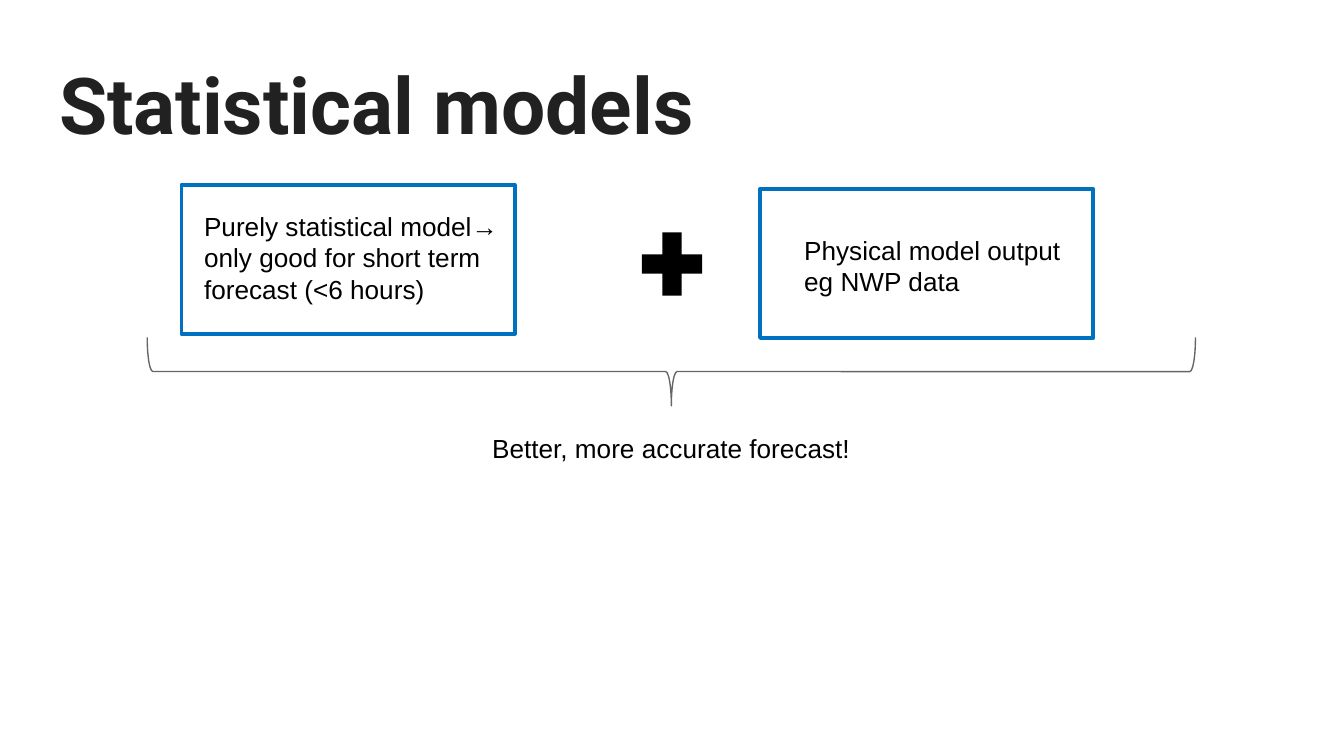
from pptx import Presentation
from pptx.dml.color import RGBColor
from pptx.enum.shapes import MSO_SHAPE
from pptx.enum.text import MSO_ANCHOR, MSO_AUTO_SIZE, PP_ALIGN
from pptx.util import Pt

EMU_PER_PX = 4572  # 200 px to the inch
TITLE_COLOR = RGBColor(0x21, 0x21, 0x21)
BLACK = RGBColor(0x00, 0x00, 0x00)
BLUE = RGBColor(0x00, 0x70, 0xC0)
GRAY = RGBColor(0x66, 0x66, 0x66)

TITLE_ONLY_LAYOUT = 5
INSET = 20
FRAME_SIZE = (496, 222)


def px(length):
    return length * EMU_PER_PX


def emu_box(box):
    return [px(length) for length in box]


def write_text(shape, text, *, size=14, font="Arial", color=BLACK, bold=False,
               align=PP_ALIGN.LEFT):
    frame = shape.text_frame
    frame.word_wrap = True
    frame.auto_size = MSO_AUTO_SIZE.NONE
    frame.vertical_anchor = MSO_ANCHOR.TOP
    frame.margin_left = frame.margin_right = px(INSET)
    frame.margin_top = frame.margin_bottom = px(INSET)
    paragraph = frame.paragraphs[0]
    paragraph.alignment = align
    run = paragraph.add_run()
    run.text = text
    run.font.name = font
    run.font.size = Pt(size)
    run.font.bold = bold
    run.font.color.rgb = color


def add_text(slide, box, text, **text_format):
    write_text(slide.shapes.add_textbox(*emu_box(box)), text, **text_format)


def add_preset(slide, preset, box, *, fill=None, line=None, line_width=1):
    shape = slide.shapes.add_shape(preset, *emu_box(box))
    shape.shadow.inherit = False
    if fill is None:
        shape.fill.background()
    else:
        shape.fill.solid()
        shape.fill.fore_color.rgb = fill
    if line is None:
        shape.line.fill.background()
    else:
        shape.line.color.rgb = line
        shape.line.width = Pt(line_width)
    return shape


def add_title(slide, box, text):
    title = slide.shapes.title
    title.left, title.top, title.width, title.height = emu_box(box)
    write_text(title, text, size=42, font="Roboto", color=TITLE_COLOR, bold=True)


def add_model(slide, box, text, text_box):
    """Draw a framed model; text_box is relative to the frame's corner."""
    left, top, _, _ = box
    text_left, text_top, text_width, text_height = text_box
    add_text(slide, (left + text_left, top + text_top, text_width, text_height), text)
    add_preset(slide, MSO_SHAPE.RECTANGLE, box, line=BLUE, line_width=2)


def add_plus(slide, box):
    plus = add_preset(slide, MSO_SHAPE.MATH_PLUS, box, fill=BLACK)
    plus.adjustments[0] = 0.235


def add_result(slide, box, text):
    """Draw a downward brace across the box with the result centred below it."""
    left, top, width, height = box
    depth, text_width, text_height = 102, 654, 188
    center_x, center_y = left + width // 2, top + depth // 2
    brace_box = (center_x - depth // 2, center_y - width // 2, depth, width)
    brace = add_preset(slide, MSO_SHAPE.RIGHT_BRACE, brace_box,
                       line=GRAY, line_width=0.75)
    brace.rotation = 90
    brace.adjustments[0] = 0.083
    brace.adjustments[1] = 0.5
    text_box = (center_x - text_width // 2, top + height - text_height,
                text_width, text_height)
    add_text(slide, text_box, text, align=PP_ALIGN.CENTER)


def main():
    presentation = Presentation()
    presentation.slide_width = px(2000)
    presentation.slide_height = px(1125)
    slide = presentation.slides.add_slide(
        presentation.slide_layouts[TITLE_ONLY_LAYOUT])

    add_title(slide, (68, 64, 1864, 176), "Statistical models")
    add_result(slide, (219, 502, 1560, 310), "Better, more accurate forecast!")
    add_model(slide, (270, 275, *FRAME_SIZE),
              "Purely statistical model→ only good for short term forecast (<6 hours)",
              (14, 18, 500, 118))
    add_plus(slide, (939, 329, 122, 128))
    add_model(slide, (1131, 281, *FRAME_SIZE),
              "Physical model output eg NWP data", (46, 48, 430, 128))

    presentation.save("out.pptx")


if __name__ == "__main__":
    main()
